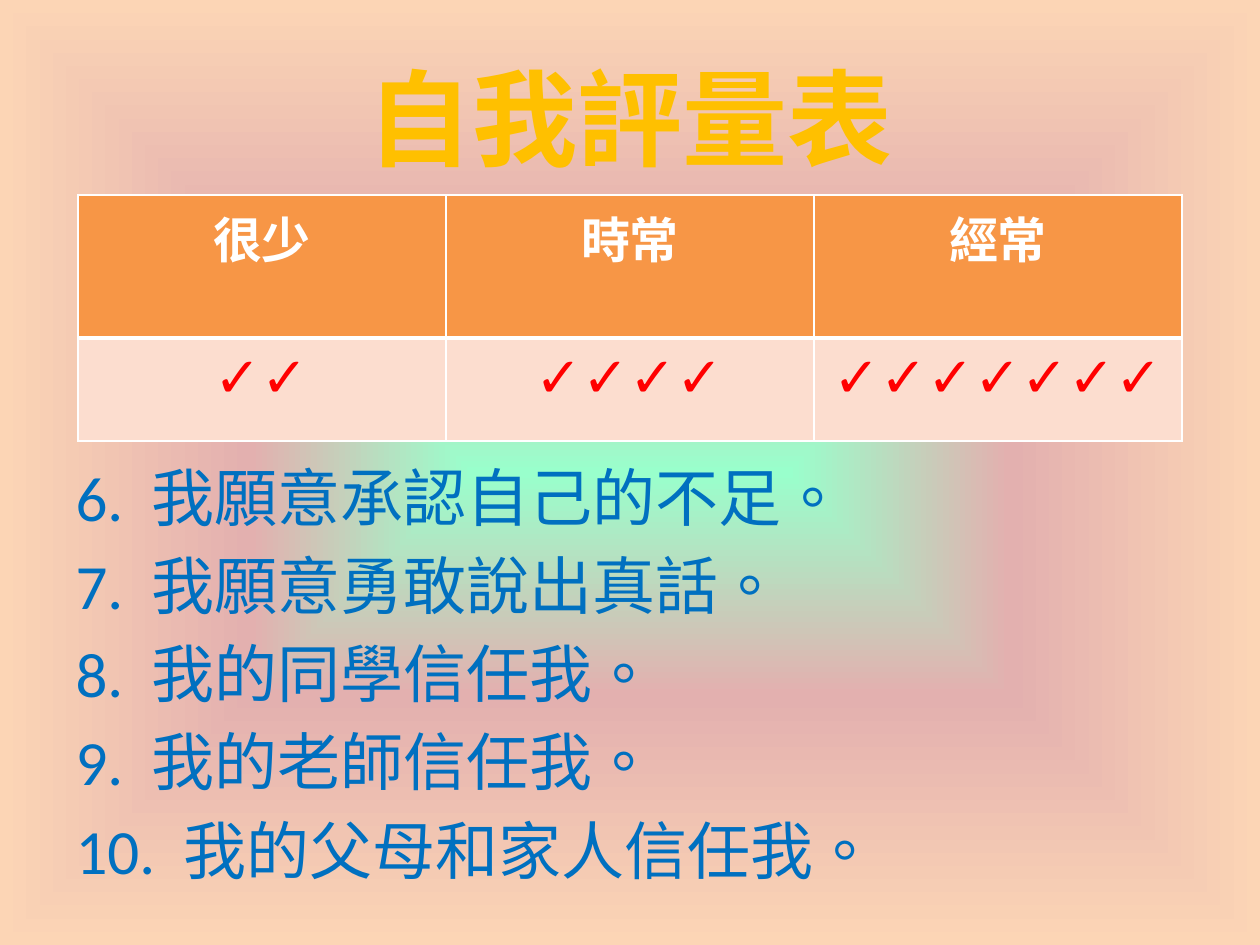
import pptx
import pptx.util
import pptx.oxml
import pptx.oxml.ns
import pptx.dml.color
import pptx.enum.text

PIXEL = 914400 // 126
COLORS = {
    "title": "FFC000", "list": "0070C0", "check": "FF0000", "white": "FFFFFF",
    "header": "F79646", "cell": "FCDDCF",
    "center": "99FFCC", "ring": "E3B0AF", "edge": "FCD5B5",
}
NAMESPACES = pptx.oxml.ns.nsdecls("a", "p")
ALIGN = pptx.enum.text.PP_ALIGN
ANCHOR = pptx.enum.text.MSO_ANCHOR
RATINGS = [("很少", 2), ("時常", 4), ("經常", 7)]
STATEMENTS = [
    "我願意承認自己的不足。",
    "我願意勇敢說出真話。",
    "我的同學信任我。",
    "我的老師信任我。",
    "我的父母和家人信任我。",
]


def px(value):
    return pptx.util.Emu(value * PIXEL)


def rgb(name):
    return pptx.dml.color.RGBColor.from_string(COLORS[name])


def add_text(paragraph, text, size, color, bold=False, align=ALIGN.LEFT, spacing=0):
    paragraph.alignment = align
    run = paragraph.add_run()
    run.text = text
    run.font.name = "Calibri"
    run.font.size = pptx.util.Pt(size)
    run.font.bold = bold
    run.font.color.rgb = rgb(color)
    properties = run._r.get_or_add_rPr()
    properties.set("lang", "zh-TW")
    if spacing:
        properties.set("spc", str(spacing * 100))


def set_background(slide):
    stops = "".join(
        f'<a:gs pos="{position * 1000}"><a:srgbClr val="{COLORS[name]}"/></a:gs>'
        for position, name in ((0, "center"), (47, "ring"), (100, "edge"))
    )
    background = pptx.oxml.parse_xml(
        f'<p:bg {NAMESPACES}><p:bgPr><a:gradFill rotWithShape="1"><a:gsLst>{stops}</a:gsLst>'
        '<a:path path="shape"><a:fillToRect l="50000" t="50000" r="50000" b="50000"/></a:path>'
        "</a:gradFill><a:effectLst/></p:bgPr></p:bg>"
    )
    slide.shapes._spTree.getparent().insert(0, background)


def place(shape, left, top, width, height, anchor):
    shape.left, shape.top, shape.width, shape.height = map(px, (left, top, width, height))
    frame = shape.text_frame
    frame.word_wrap = True
    frame.auto_size = pptx.enum.text.MSO_AUTO_SIZE.NONE
    frame.vertical_anchor = anchor
    return frame


def add_statements(frame, statements, first_number):
    for index, statement in enumerate(statements):
        paragraph = frame.add_paragraph() if index else frame.paragraphs[0]
        properties = paragraph._p.get_or_add_pPr()
        properties.set("marL", "0")
        properties.set("indent", "0")
        properties.append(pptx.oxml.parse_xml(f"<a:buNone {NAMESPACES}/>"))
        add_text(paragraph, f"{first_number + index}.", 36, "list")
        add_text(paragraph, " ", 36, "list", spacing=8)
        add_text(paragraph, statement, 36, "list")


def format_cell(cell, fill, top, bottom):
    properties = cell._tc.get_or_add_tcPr()
    for side, width in (("L", 1), ("R", 1), ("T", top), ("B", bottom)):
        properties.append(pptx.oxml.parse_xml(
            f'<a:ln{side} {NAMESPACES} w="{width * 12700}"><a:solidFill>'
            f'<a:srgbClr val="{COLORS["white"]}"/></a:solidFill></a:ln{side}>'
        ))
    cell.fill.solid()
    cell.fill.fore_color.rgb = rgb(fill)


def add_rating_table(slide, ratings):
    frame = slide.shapes.add_table(2, len(ratings), px(78), px(195), px(1104), px(246))
    table = frame.table
    for row, height in zip(table.rows, (143, 103)):
        row.height = px(height)
    for column, (label, checks) in enumerate(ratings):
        header, answer = table.cell(0, column), table.cell(1, column)
        format_cell(header, "header", top=1, bottom=3)
        format_cell(answer, "cell", top=3, bottom=1)
        add_text(header.text_frame.paragraphs[0], label, 28, "white", bold=True, align=ALIGN.CENTER)
        add_text(answer.text_frame.paragraphs[0], "✓" * checks, 32, "check", align=ALIGN.CENTER)


def main():
    presentation = pptx.Presentation()
    presentation.slide_width, presentation.slide_height = px(1260), px(945)
    slide = presentation.slides.add_slide(presentation.slide_layouts[1])
    set_background(slide)
    title = place(slide.shapes.title, 63, 38, 1134, 157, ANCHOR.MIDDLE)
    add_text(title.paragraphs[0], "自我評量表", 60, "title", bold=True, align=ALIGN.CENTER)
    body = place(slide.placeholders[1], 63, 452, 1134, 455, ANCHOR.TOP)
    add_statements(body, STATEMENTS, first_number=6)
    add_rating_table(slide, RATINGS)
    presentation.save("out.pptx")


main()
